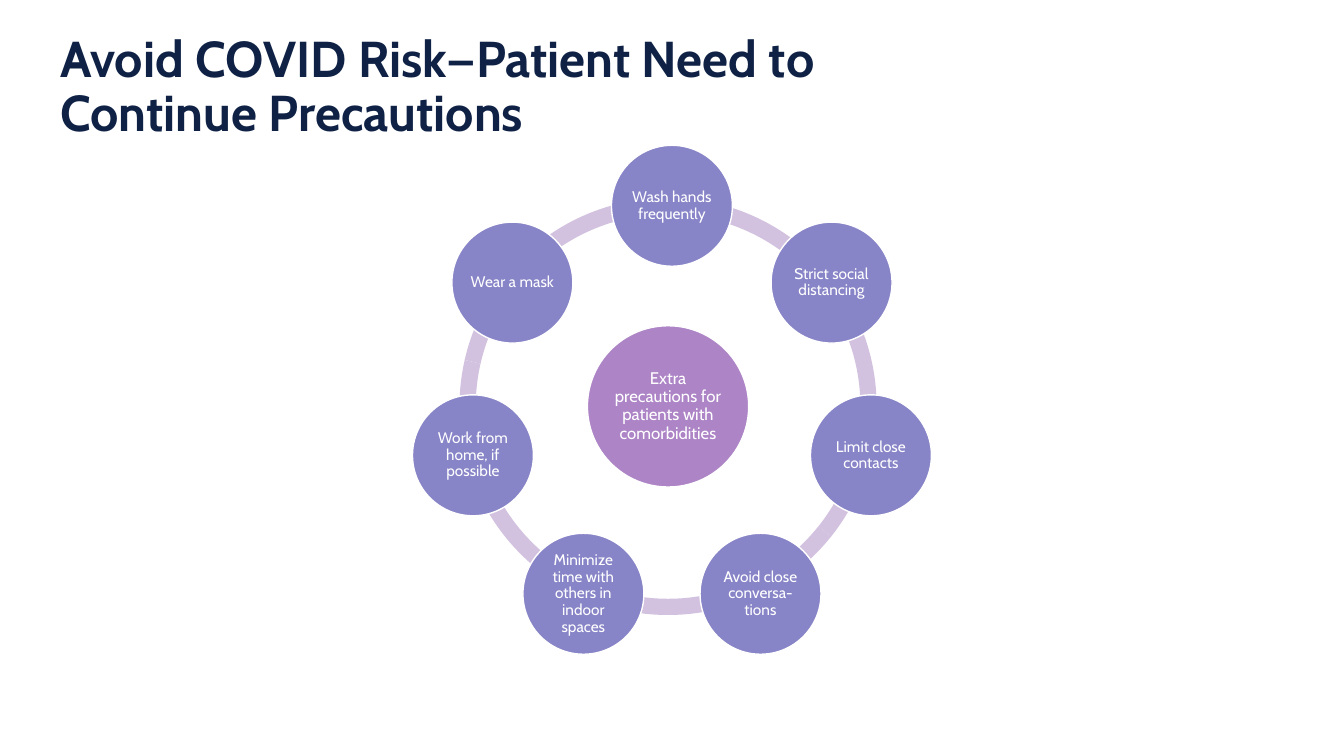
from math import cos, sin, radians
from pptx import Presentation
from pptx.dml.color import RGBColor
from pptx.enum.shapes import MSO_SHAPE as Shape
from pptx.enum.text import MSO_ANCHOR as Anchor, MSO_AUTO_SIZE as Fit, PP_ALIGN as Align
from pptx.util import Pt

NAVY = RGBColor(0x0F, 0x22, 0x46)
WHITE = RGBColor(0xFF, 0xFF, 0xFF)
LILAC = RGBColor(0xD3, 0xC2, 0xDF)
MAUVE = RGBColor(0xAD, 0x84, 0xC6)
VIOLET = RGBColor(0x87, 0x84, 0xC7)
FONT = "Cabin"
TITLE = "Avoid COVID Risk—Patient Need to\vContinue Precautions"
HUB = "Extra precautions for patients with comorbidities"
STEPS = [
    "Wash hands frequently",
    "Strict social distancing",
    "Limit close contacts",
    "Avoid close conversa-tions",
    "Minimize time with others in indoor spaces",
    "Work from home, if possible",
    "Wear a mask",
]


def write(frame, text, size, color, align, bold=False):
    frame.text = text
    frame.word_wrap = True
    frame.auto_size = Fit.NONE
    frame.vertical_anchor = Anchor.MIDDLE
    for para in frame.paragraphs:
        para.alignment = align
        para.line_spacing = 0.9
        for run in para.runs:
            font = run.font
            font.name, font.size, font.bold = FONT, Pt(size), bold
            font.color.rgb = color


def add_title(slide, left, top, width, height):
    title = slide.shapes.title
    title.left, title.top = Pt(left), Pt(top)
    title.width, title.height = Pt(width), Pt(height)
    write(title.text_frame, TITLE, 36, NAVY, Align.LEFT, True)


def add_round(slide, kind, x, y, size, fill):
    """Place a square shape by its centre, without outline or shadow."""
    half = size / 2
    shape = slide.shapes.add_shape(kind, Pt(x - half), Pt(y - half), Pt(size), Pt(size))
    shape.shadow.inherit = False
    shape.fill.solid()
    shape.fill.fore_color.rgb = fill
    shape.line.fill.background()
    return shape


def add_disc(slide, x, y, size, fill, text, points, inset):
    disc = add_round(slide, Shape.OVAL, x, y, size, fill)
    disc.line.color.rgb = WHITE
    disc.line.width = Pt(1)
    frame = disc.text_frame
    frame.margin_left = frame.margin_right = Pt(inset)
    frame.margin_top = frame.margin_bottom = Pt(inset)
    write(frame, text, points, WHITE, Align.CENTER)


def add_ring(slide, x, y, size):
    """Close the ring with one arc per step; the last spans the rest."""
    count = len(STEPS)
    gap = 216 / count
    stops = [54 / count + gap * i for i in range(count)]
    for start, end in zip(stops, stops[1:] + stops[:1]):
        arc = add_round(slide, Shape.BLOCK_ARC, x, y, size, LILAC)
        for i, value in enumerate((start * 0.6, end * 0.6, 0.039)):
            arc.adjustments[i] = value


def add_cycle(slide, left, top, width):
    """Draw the hub and its steps, clockwise from the top."""
    disc = 86.4
    reach = 145.8
    x, y = left + width / 2, top + disc / 2 + reach
    add_ring(slide, x - 2.8, y - 2.5, 298)
    add_disc(slide, x - 2.8, y - 2.5, 115.2, MAUVE, HUB, 12, 1)
    for i, step in enumerate(STEPS):
        turn = radians(360 / len(STEPS) * i)
        add_disc(slide, x + reach * sin(turn), y - reach * cos(turn),
                 disc, VIOLET, step, 11, 0)


def main():
    deck = Presentation()
    deck.slide_width, deck.slide_height = Pt(960), Pt(540)
    slide = deck.slides.add_slide(deck.slide_layouts[5])
    add_title(slide, 36, 18, 900, 90)
    add_cycle(slide, 294.5, 103.8, 371)
    deck.save("out.pptx")


if __name__ == "__main__":
    main()
